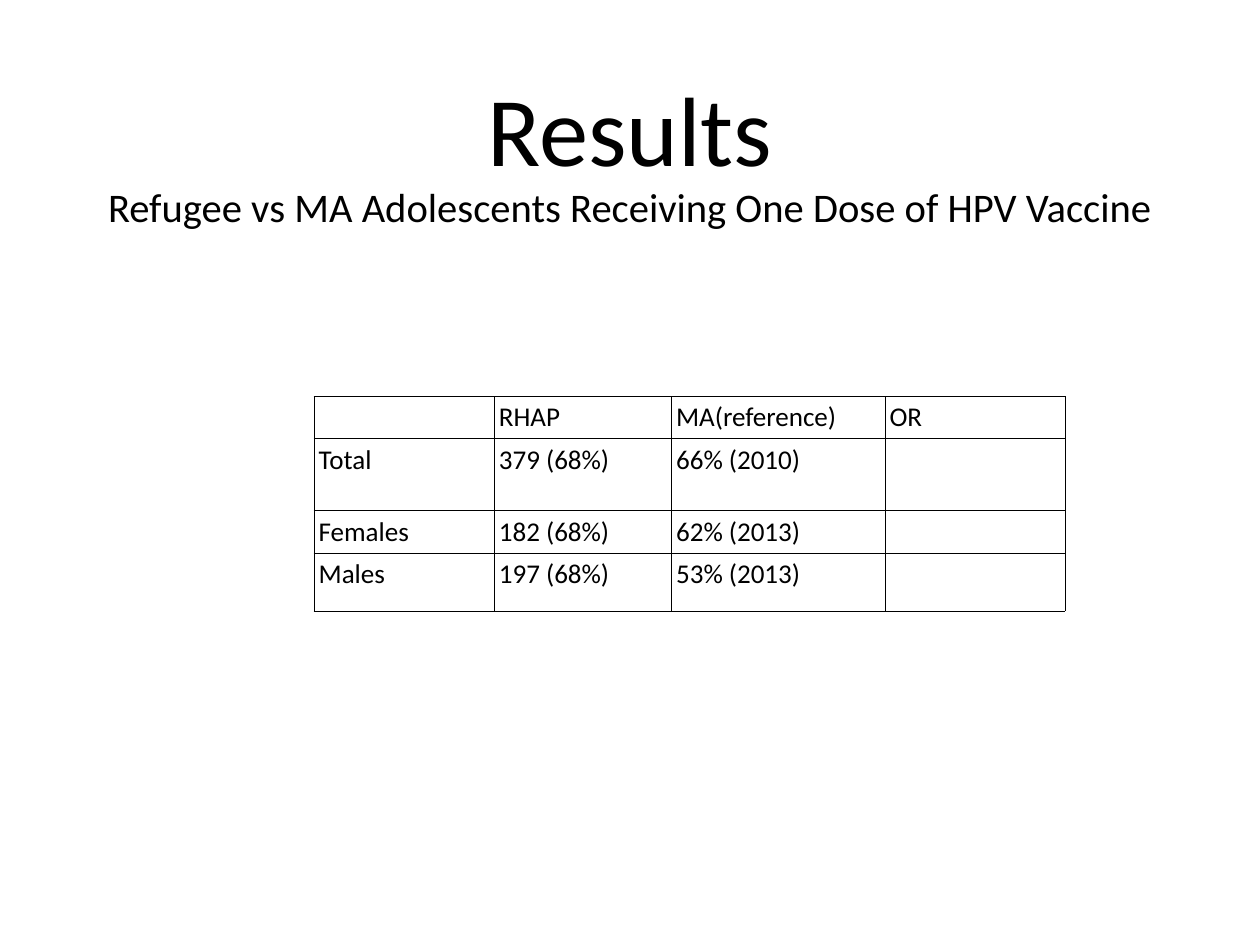
from dataclasses import dataclass

from lxml import etree
from pptx import Presentation
from pptx.dml.color import RGBColor
from pptx.enum.text import MSO_ANCHOR, PP_ALIGN
from pptx.oxml.ns import qn
from pptx.slide import Slide
from pptx.table import _Cell
from pptx.text.text import _Paragraph
from pptx.util import Pt

CENTER = PP_ALIGN.CENTER
LEFT = PP_ALIGN.LEFT
MIDDLE = MSO_ANCHOR.MIDDLE
TOP = MSO_ANCHOR.TOP


@dataclass(frozen=True)
class Theme:
    font: str = "Calibri"
    ink: str = "000000"
    title_size: float = 80
    subtitle_size: float = 33
    cell_size: float = 22
    border_width: float = 0.25
    cell_margin: float = 4
    title_spacing: float = 0.9


@dataclass(frozen=True)
class Frame:
    left: float
    top: float
    width: float
    height: float


@dataclass(frozen=True)
class Line:
    text: str
    size: float


THEME = Theme()
PAGE_WIDTH, PAGE_HEIGHT = 1024, 768
HEADING_FRAME = Frame(75, 14.5, 874, 225.5)
HEADING = (
    Line("Results", THEME.title_size),
    Line("Refugee vs MA Adolescents Receiving One Dose of HPV Vaccine", THEME.subtitle_size),
)
TABLE_LEFT, TABLE_TOP = 255, 322
COLUMN_WIDTHS = (146.5, 144, 173.5, 146.5)
ROW_HEIGHTS = (34, 58.5, 34, 47.5)
RATES = (
    ("", "RHAP", "MA(reference)", "OR"),
    ("Total", "379 (68%)", "66% (2010)", ""),
    ("Females", "182 (68%)", "62% (2013)", ""),
    ("Males", "197 (68%)", "53% (2013)", ""),
)


def add_span(para: _Paragraph, line: Line) -> None:
    span = para.add_run()
    span.text = line.text
    span.font.name = THEME.font
    span.font.size = Pt(line.size)
    span.font.bold = False
    span.font.color.rgb = RGBColor.from_string(THEME.ink)


def add_heading(page: Slide, frame: Frame, lines: tuple[Line, ...]) -> None:
    box = page.shapes.add_textbox(
        Pt(frame.left), Pt(frame.top), Pt(frame.width), Pt(frame.height)
    )
    text = box.text_frame
    text.word_wrap = True
    text.vertical_anchor = MIDDLE
    text.margin_left = text.margin_right = text.margin_top = text.margin_bottom = 0
    for index, line in enumerate(lines):
        para = text.add_paragraph() if index else text.paragraphs[0]
        para.alignment = CENTER
        para.line_spacing = THEME.title_spacing
        add_span(para, line)


def add_borders(cell: _Cell) -> None:
    properties = cell._tc.get_or_add_tcPr()
    for position, side in enumerate(("a:lnL", "a:lnR", "a:lnT", "a:lnB")):
        border = etree.Element(qn(side), w=str(Pt(THEME.border_width)))
        fill = etree.SubElement(border, qn("a:solidFill"))
        etree.SubElement(fill, qn("a:srgbClr"), val=THEME.ink)
        properties.insert(position, border)


def fill_cell(cell: _Cell, text: str) -> None:
    cell.fill.background()
    cell.vertical_anchor = TOP
    margin = Pt(THEME.cell_margin)
    cell.margin_left = cell.margin_right = cell.margin_top = cell.margin_bottom = margin
    add_borders(cell)
    if text:
        para = cell.text_frame.paragraphs[0]
        para.alignment = LEFT
        add_span(para, Line(text, THEME.cell_size))


def add_rates(page: Slide) -> None:
    table = page.shapes.add_table(
        len(ROW_HEIGHTS), len(COLUMN_WIDTHS), Pt(TABLE_LEFT), Pt(TABLE_TOP),
        Pt(sum(COLUMN_WIDTHS)), Pt(sum(ROW_HEIGHTS)),
    ).table
    table.first_row = table.horz_banding = False
    for column, width in zip(table.columns, COLUMN_WIDTHS):
        column.width = Pt(width)
    for row, height, texts in zip(table.rows, ROW_HEIGHTS, RATES):
        row.height = Pt(height)
        for cell, text in zip(row.cells, texts):
            fill_cell(cell, text)


def main() -> None:
    deck = Presentation()
    deck.slide_width, deck.slide_height = Pt(PAGE_WIDTH), Pt(PAGE_HEIGHT)
    page = deck.slides.add_slide(deck.slide_layouts[6])
    add_heading(page, HEADING_FRAME, HEADING)
    add_rates(page)
    deck.save("out.pptx")


if __name__ == "__main__":
    main()
